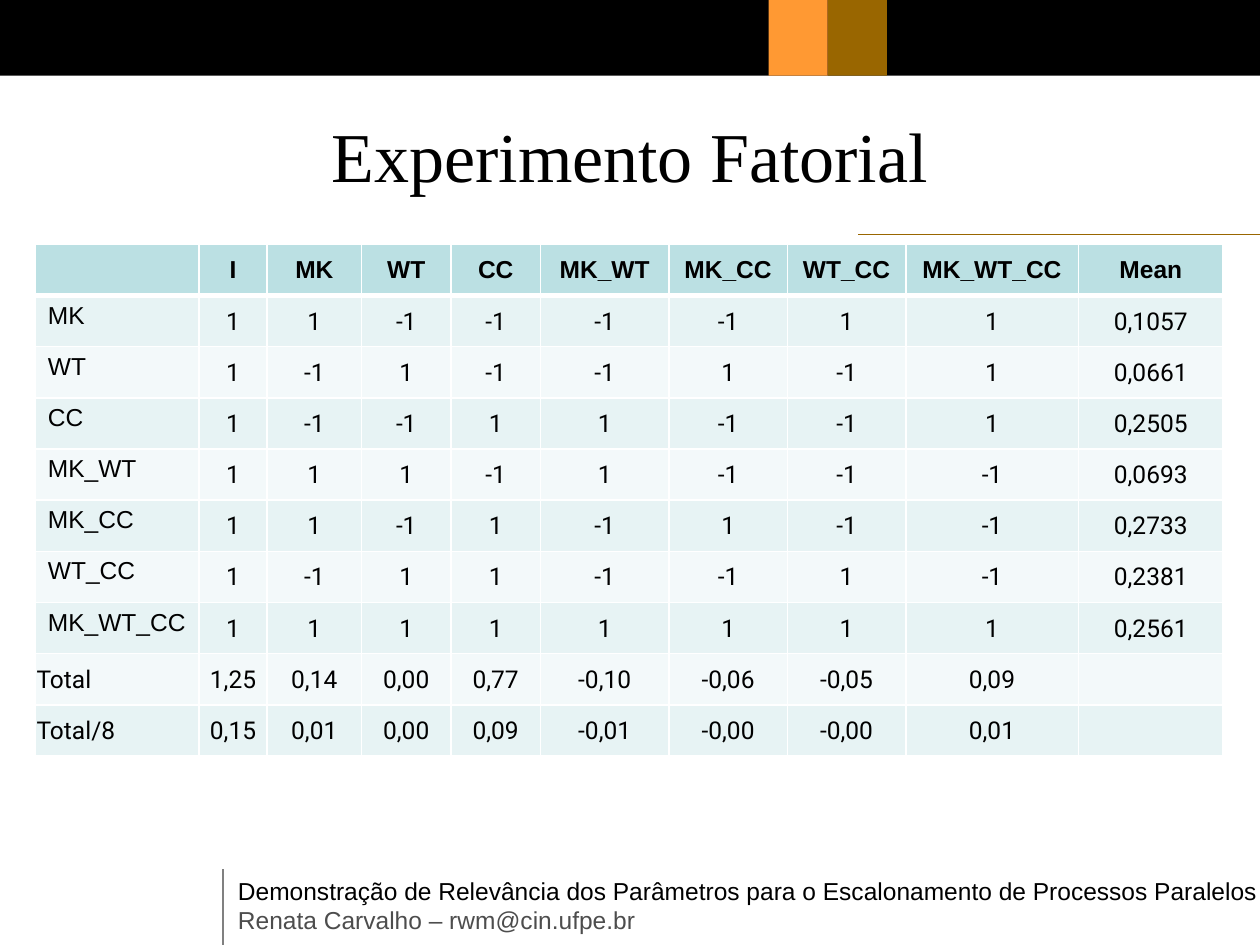
from lxml import etree
from pptx import Presentation
from pptx.dml.color import RGBColor
from pptx.enum.shapes import MSO_CONNECTOR, MSO_SHAPE
from pptx.enum.text import MSO_ANCHOR, MSO_AUTO_SIZE, PP_ALIGN
from pptx.oxml.ns import qn
from pptx.util import Inches, Pt

RECTANGLE = MSO_SHAPE.RECTANGLE
STRAIGHT = MSO_CONNECTOR.STRAIGHT
MIDDLE, TOP = MSO_ANCHOR.MIDDLE, MSO_ANCHOR.TOP
CENTER, LEFT = PP_ALIGN.CENTER, PP_ALIGN.LEFT

COLORS = {
    "black": "000000", "white": "FFFFFF", "brown": "996600", "orange": "FF9933",
    "rule": "808080", "author": "4D4D4D",
    "header": "BBE0E3", "odd": "E7F3F4", "even": "F3F9FA",
}
HEADERS = ["", "I", "MK", "WT", "CC", "MK_WT", "MK_CC", "WT_CC", "MK_WT_CC", "Mean"]
ROWS = [
    "MK 1 1 -1 -1 -1 -1 1 1 0,1057",
    "WT 1 -1 1 -1 -1 1 -1 1 0,0661",
    "CC 1 -1 -1 1 1 -1 -1 1 0,2505",
    "MK_WT 1 1 1 -1 1 -1 -1 -1 0,0693",
    "MK_CC 1 1 -1 1 -1 1 -1 -1 0,2733",
    "WT_CC 1 -1 1 1 -1 -1 1 -1 0,2381",
    "MK_WT_CC 1 1 1 1 1 1 1 1 0,2561",
    "Total 1,25 0,14 0,00 0,77 -0,10 -0,06 -0,05 0,09",
    "Total/8 0,15 0,01 0,00 0,09 -0,01 -0,00 -0,00 0,01",
]
COLUMN_WIDTHS = [1.3, 0.54, 0.75, 0.71, 0.71, 1.02, 0.94, 0.94, 1.37, 1.15]


def style_font(paragraph, name, size, color, bold=False):
    font = paragraph.font
    font.name, font.size, font.bold = name, Pt(size), bold
    font.color.rgb = RGBColor.from_string(COLORS[color])


def add_border(cell, side, width):
    """Draw a white border on one side (L, R, T or B); call before filling."""
    line = etree.SubElement(cell._tc.get_or_add_tcPr(), qn(f"a:ln{side}"), w=str(Pt(width)))
    fill = etree.SubElement(line, qn("a:solidFill"))
    etree.SubElement(fill, qn("a:srgbClr"), val=COLORS["white"])


deck = Presentation()
deck.slide_width, deck.slide_height = Inches(10), Inches(7.5)
page = deck.slides.add_slide(deck.slide_layouts[5])

# Top band
for left, width, color in [(0, 10, "black"), (6.57, 0.47, "brown"), (6.1, 0.47, "orange")]:
    band = page.shapes.add_shape(RECTANGLE, Inches(left), 0, Inches(width), Inches(0.6))
    band.shadow.inherit = False
    band.fill.solid()
    band.fill.fore_color.rgb = RGBColor.from_string(COLORS[color])
    band.line.fill.background()

# Rules beside the footer and under the title
for x1, y1, x2, y2, color in [(1.77, 6.9, 1.77, 7.5, "rule"), (6.81, 1.86, 10, 1.86, "brown")]:
    rule = page.shapes.add_connector(STRAIGHT, Inches(x1), Inches(y1), Inches(x2), Inches(y2))
    rule.line.color.rgb = RGBColor.from_string(COLORS[color])
    rule.line.width = Pt(0.75)
    etree.SubElement(rule._element.spPr, qn("a:effectLst"))

# Footer
footer = page.shapes.add_textbox(Inches(1.79), Inches(6.9), Inches(8.33), Inches(0.57))
footer.text_frame.word_wrap = False
footer.text_frame.auto_size = MSO_AUTO_SIZE.SHAPE_TO_FIT_TEXT
footer.text_frame.text = (
    "Demonstração de Relevância dos Parâmetros para o Escalonamento de Processos Paralelos\n"
    "Renata Carvalho – rwm@cin.ufpe.br"
)
for paragraph, color in zip(footer.text_frame.paragraphs, ["black", "author"]):
    style_font(paragraph, "Arial", 14, color)

# Title
title = page.shapes.title
title.left, title.top, title.width, title.height = Inches(0.5), Inches(0.6), Inches(9), Inches(1.25)
title.text_frame.text = "Experimento Fatorial"
title.text_frame.vertical_anchor = MIDDLE
title.text_frame.paragraphs[0].alignment = CENTER
style_font(title.text_frame.paragraphs[0], "Times New Roman", 40, "black")

# Factorial table
grid = [HEADERS] + [row.split() for row in ROWS]
table = page.shapes.add_table(
    len(grid), len(HEADERS), Inches(0.28), Inches(1.94), Inches(9.45), Inches(4.06)
).table
for column, width in zip(table.columns, COLUMN_WIDTHS):
    column.width = Inches(width)

for r, values in enumerate(grid):
    is_header = r == 0
    is_total = values[0].startswith("Total")
    for c in range(len(HEADERS)):
        cell = table.cell(r, c)
        for side in "LRTB":
            thick = (r, side) in [(0, "B"), (1, "T")]
            add_border(cell, side, 3 if thick else 1)
        cell.fill.solid()
        fill = "header" if is_header else "odd" if r % 2 else "even"
        cell.fill.fore_color.rgb = RGBColor.from_string(COLORS[fill])

        is_row_label = c == 0 and not is_header and not is_total
        cell.vertical_anchor = TOP if is_row_label else MIDDLE
        if not is_header and not is_row_label:
            cell.margin_left = cell.margin_right = cell.margin_top = Inches(0.01)
            cell.margin_bottom = 0
        paragraph = cell.text_frame.paragraphs[0]
        paragraph.text = values[c] if c < len(values) else ""
        paragraph.alignment = LEFT if c == 0 else CENTER
        name = "Arial" if is_header or is_row_label else "Roboto"
        style_font(paragraph, name, 14, "black", bold=is_header)

deck.save("out.pptx")
